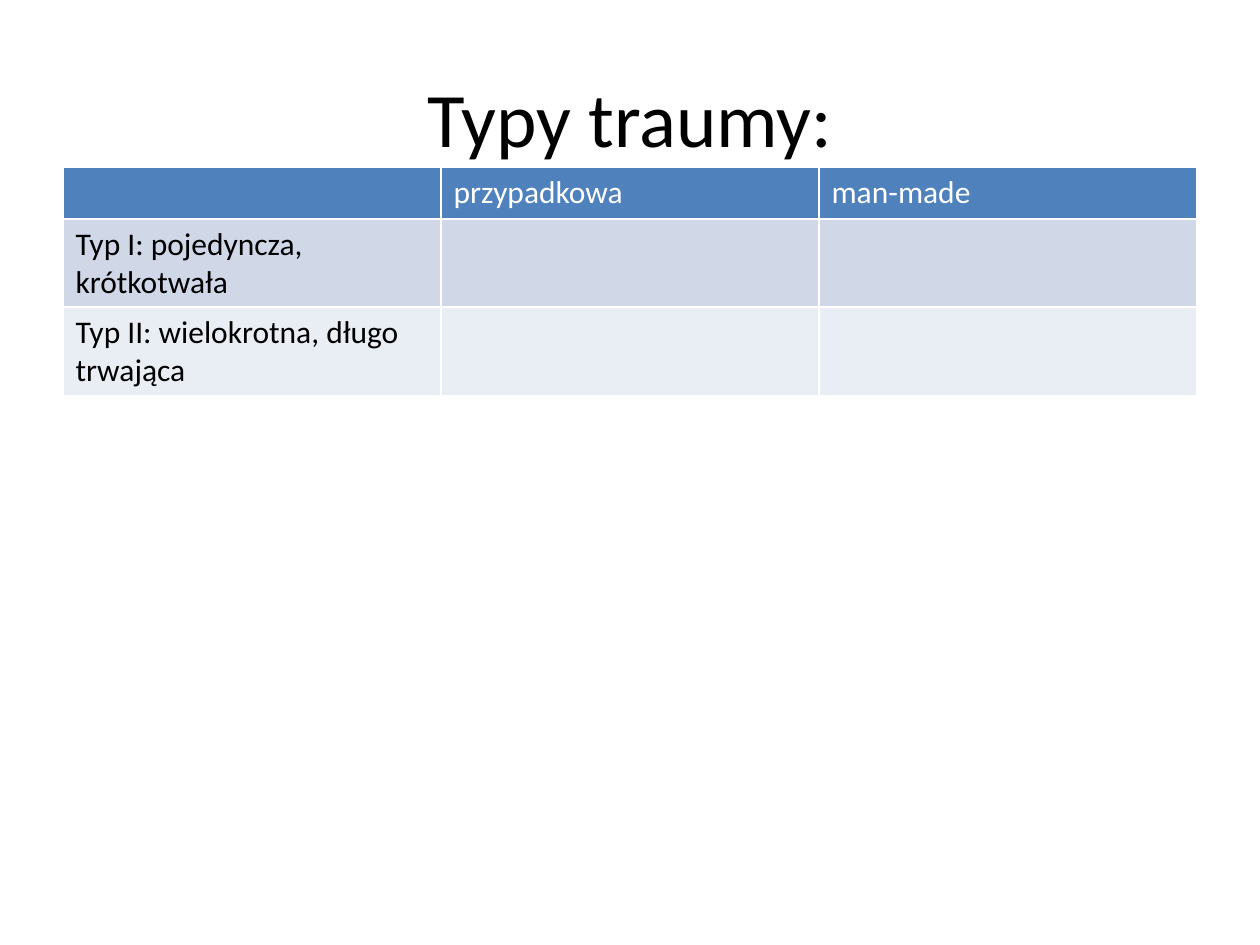
import dataclasses

import pptx
import pptx.dml.color
import pptx.enum.text
import pptx.util

Cm = pptx.util.Cm
Pt = pptx.util.Pt
Rgb = pptx.dml.color.RGBColor.from_string


@dataclasses.dataclass(frozen=True)
class Theme:
    font: str = "Calibri"
    title: int = 44
    body: int = 18
    dark: str = "000000"
    light: str = "FFFFFF"
    head: str = "4F81BD"
    bands: tuple = ("D0D8E8", "E9EDF4")


THEME = Theme()
ROWS = [
    ["", "przypadkowa", "man-made"],
    ["Typ I: pojedyncza, krótkotwała", "", ""],
    ["Typ II: wielokrotna, długo trwająca", "", ""],
]


def add_run(para, text, size, color):
    run = para.add_run()
    run.text = text
    run.font.name = THEME.font
    run.font.size = Pt(size)
    run.font.bold = False
    run.font.color.rgb = Rgb(color)


def add_title(slide, box, text):
    frame = slide.shapes.add_textbox(*box).text_frame
    frame.word_wrap = True
    frame.vertical_anchor = pptx.enum.text.MSO_ANCHOR.MIDDLE
    para = frame.paragraphs[0]
    para.alignment = pptx.enum.text.PP_ALIGN.CENTER
    add_run(para, text, THEME.title, THEME.dark)


def add_grid(slide, box, rows):
    table = slide.shapes.add_table(len(rows), len(rows[0]), *box).table
    for i, row in enumerate(rows):
        fill = THEME.bands[(i - 1) % 2] if i else THEME.head
        color = THEME.dark if i else THEME.light
        for j, text in enumerate(row):
            cell = table.cell(i, j)
            cell.fill.solid()
            cell.fill.fore_color.rgb = Rgb(fill)
            para = cell.text_frame.paragraphs[0]
            if text:
                add_run(para, text, THEME.body, color)
            else:
                para.font.size = Pt(THEME.body)


def main():
    deck = pptx.Presentation()
    deck.slide_width, deck.slide_height = Cm(25.4), Cm(19.05)
    slide = deck.slides.add_slide(deck.slide_layouts[6])
    left, width = Cm(1.27), Cm(22.86)
    add_title(slide, (left, Cm(0.76), width, Cm(3.18)), "Typy traumy:")
    add_grid(slide, (left, Cm(3.38), width, Cm(3.09)), ROWS)
    deck.save("out.pptx")


if __name__ == "__main__":
    main()
